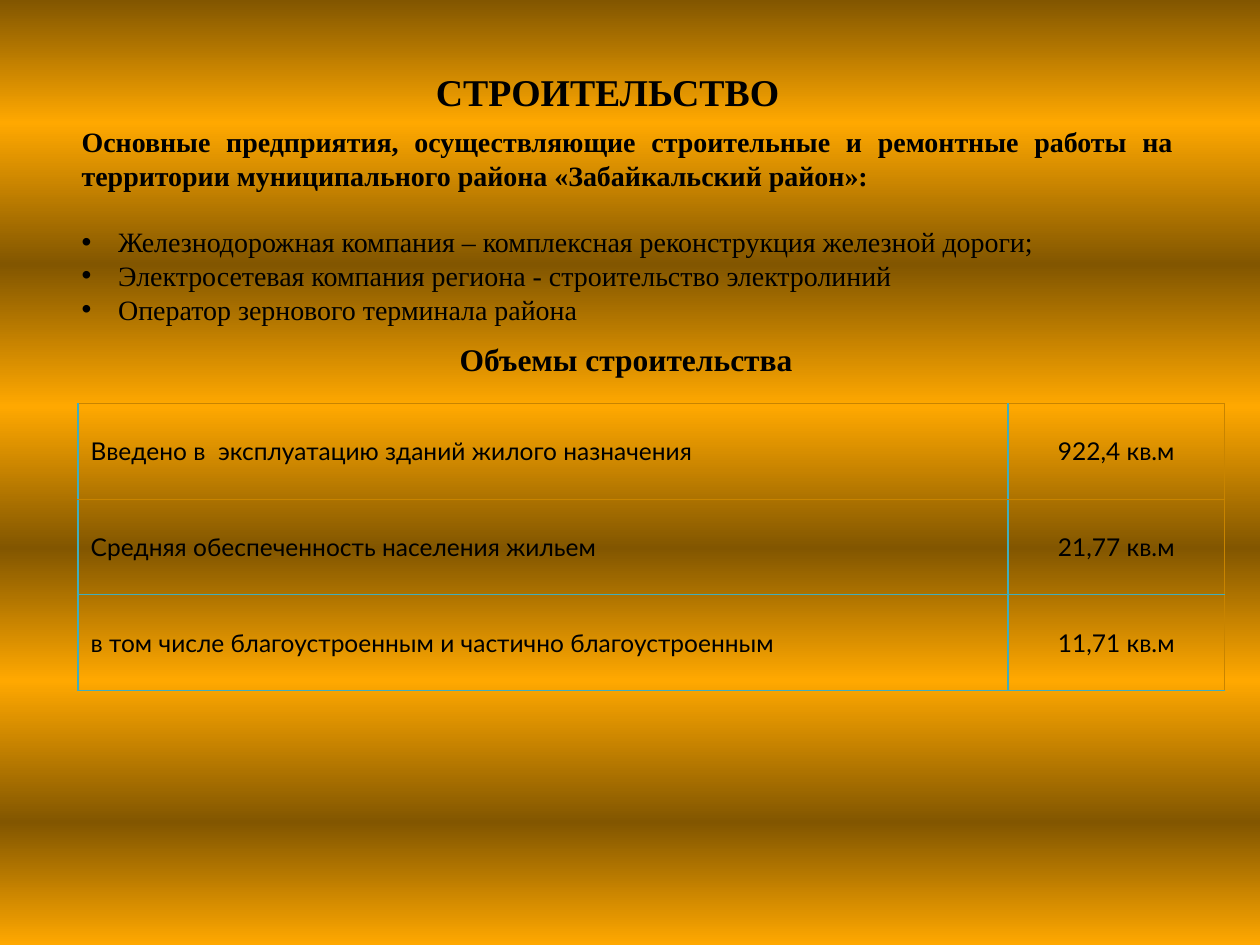
from lxml.etree import SubElement as Sub
from pptx import Presentation
from pptx.dml.color import RGBColor as RGB
from pptx.enum.text import MSO_ANCHOR as Anchor, PP_ALIGN as Align
from pptx.oxml.ns import qn
from pptx.util import Inches, Pt

BLACK = RGB(0, 0, 0)
BROWN = RGB(0x82, 0x56, 0x00)
GOLD = RGB(0xFF, 0xA8, 0x00)
TEAL = RGB(0x41, 0xAE, 0xBD)
OCHRE = RGB(0xC8, 0x84, 0x00)
SERIF = "Times New Roman"


def write(par, text, align, **font):
    par.alignment = align
    run = par.add_run()
    run.text = text
    look = {"name": SERIF, "size": Pt(16), "bold": False} | font
    for key, val in look.items():
        setattr(run.font, key, val)
    run.font.color.rgb = BLACK


def paint(node, color):
    fill = Sub(node, qn("a:solidFill"))
    Sub(fill, qn("a:srgbClr"), val=str(color))


prs = Presentation()
prs.slide_width, prs.slide_height = Inches(10), Inches(7.5)
slide = prs.slides.add_slide(prs.slide_layouts[5])

back = slide.background.fill
back.gradient()
back.gradient_angle = 270
stops = slide.element.find(".//" + qn("a:gsLst"))
for stop in list(stops):
    stops.remove(stop)
for num, spot in enumerate([0, 13, 28, 43, 58, 72, 87, 100]):
    stop = Sub(stops, qn("a:gs"), pos=str(spot * 1000))
    Sub(stop, qn("a:srgbClr"), val=str(GOLD if num % 2 else BROWN))

title = slide.shapes.title
place = {"left": 3.36, "top": 0.55, "width": 3.86, "height": 0.39}
for key, val in place.items():
    setattr(title, key, Inches(val))
frame = title.text_frame
frame.vertical_anchor = Anchor.MIDDLE
head = frame.paragraphs[0]
head.line_spacing = 0.9
write(head, "СТРОИТЕЛЬСТВО", Align.LEFT, size=Pt(21.6), bold=True)

body = slide.shapes.add_textbox(Inches(0.55), Inches(0.94), Inches(8.86), Inches(2.26))
frame = body.text_frame
frame.word_wrap = True
intro = frame.paragraphs[0]
intro.space_after = Pt(19)
write(intro, "Основные предприятия, осуществляющие строительные и ремонтные работы на "
      "территории муниципального района «Забайкальский район»:", Align.JUSTIFY, bold=True)
firms = [
    "Железнодорожная компания – комплексная реконструкция железной дороги;",
    "Электросетевая компания региона - строительство электролиний",
    "Оператор зернового терминала района",
]
for firm in firms:
    par = frame.add_paragraph()
    write(par, firm, Align.JUSTIFY)
    props = par._p.get_or_add_pPr()
    props.set("marL", str(Inches(0.29)))
    props.set("indent", str(Inches(-0.29)))
    Sub(props, qn("a:buFont"), typeface="Arial")
    Sub(props, qn("a:buChar"), char="•")

label = slide.shapes.add_textbox(Inches(1.3), Inches(2.65), Inches(7.34), Inches(0.4))
label.text_frame.word_wrap = True
write(label.text_frame.paragraphs[0], "Объемы строительства", Align.CENTER,
      size=Pt(18), bold=True)

rows = [
    ("Введено в  эксплуатацию зданий жилого назначения", "922,4 кв.м"),
    ("Средняя обеспеченность населения жильем", "21,77 кв.м"),
    ("в том числе благоустроенным и частично благоустроенным", "11,71 кв.м"),
]
table = slide.shapes.add_table(3, 2, Inches(0.62), Inches(3.2), Inches(9.1), Inches(2.28)).table
table.first_row = table.horz_banding = False
for col, width in zip(table.columns, [7.38, 1.72]):
    col.width = Inches(width)
for r, row in enumerate(rows):
    for c, text in enumerate(row):
        cell = table.cell(r, c)
        cell.vertical_anchor = Anchor.MIDDLE
        write(cell.text_frame.paragraphs[0], text, Align.CENTER if c else Align.LEFT,
              name="Lato", size=Pt(14))
        props = cell._tc.get_or_add_tcPr()
        edges = {
            "L": TEAL,
            "R": OCHRE if c == 1 else TEAL,
            "T": TEAL if r == 2 else OCHRE,
            "B": OCHRE if r == 0 else TEAL,
        }
        for side, color in edges.items():
            width = Pt(1) if color == TEAL else Pt(0.5)
            paint(Sub(props, qn("a:ln" + side), w=str(width)), color)
        cell.fill.background()

prs.save("out.pptx")
